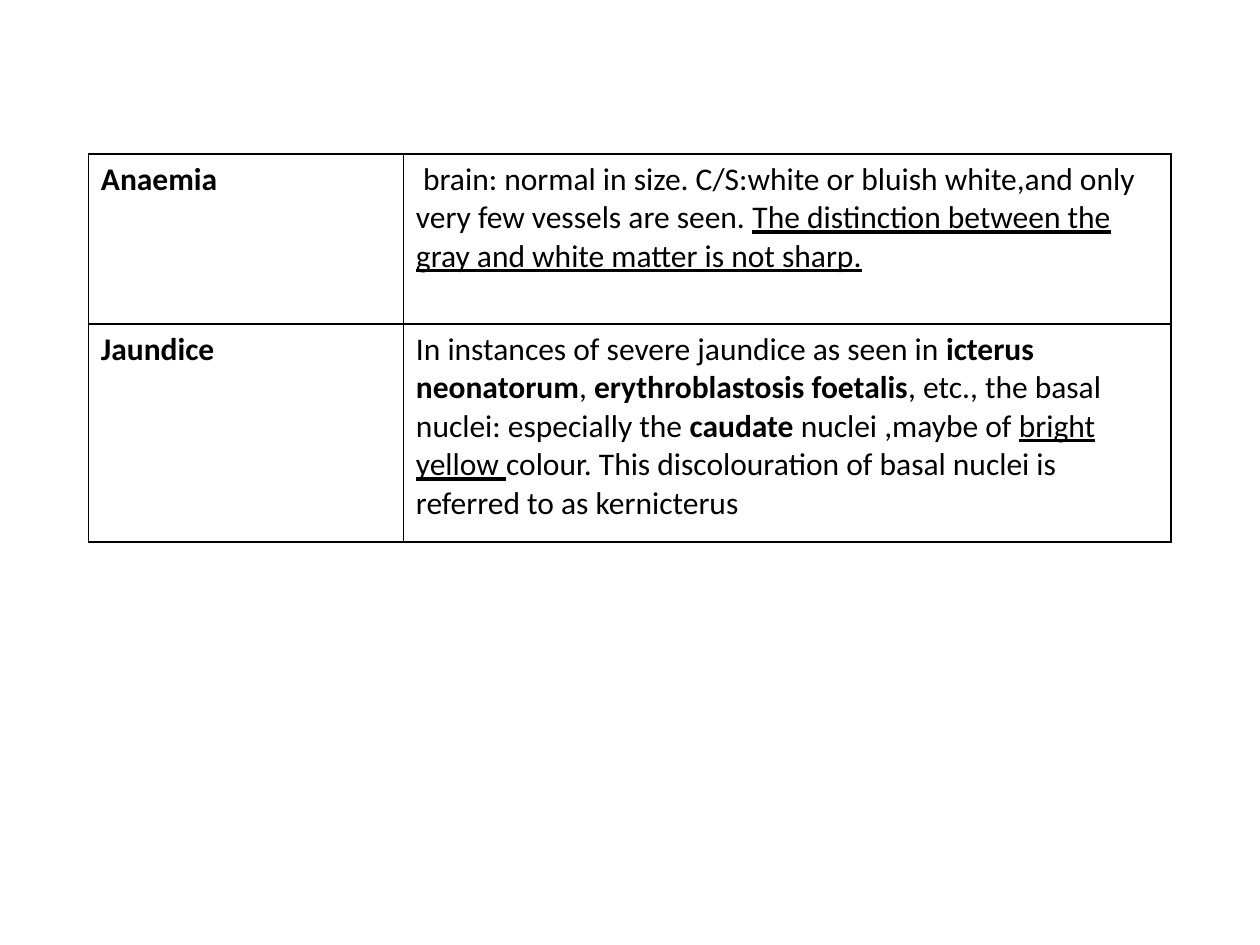
"""Build a slide with a table of brain findings in anaemia and jaundice."""
from lxml import etree
from pptx import Presentation
from pptx import util as u
from pptx.dml.color import RGBColor
from pptx.oxml.ns import qn

COLORS = {"ink": "000000", "paper": "FFFFFF"}
COLUMN_WIDTHS = [180, 438.5]
ROW_HEIGHTS = [97.2, 124.6]
FINDINGS = [
    [
        [("Anaemia", "bold")],
        [
            (" brain: normal in size. C/S:white or bluish white,and only very few vessels are seen. ", ""),
            ("The distinction between the gray and white matter is not sharp.", "underline"),
        ],
    ],
    [
        [("Jaundice", "bold")],
        [
            ("In instances of severe jaundice as seen in ", ""),
            ("icterus neonatorum", "bold"),
            (", ", ""),
            ("erythroblastosis foetalis", "bold"),
            (", etc., the basal nuclei: especially the ", ""),
            ("caudate", "bold"),
            (" nuclei ,maybe of ", ""),
            ("bright yellow ", "underline"),
            ("colour. This discolouration of basal nuclei is referred to as kernicterus", ""),
        ],
    ],
]


def add_borders(cell):
    properties = cell._tc.get_or_add_tcPr()
    for position, side in enumerate(("lnL", "lnR", "lnT", "lnB")):
        line = etree.Element(qn(f"a:{side}"), w=str(u.Pt(1)))
        fill = etree.SubElement(line, qn("a:solidFill"))
        etree.SubElement(fill, qn("a:srgbClr"), val=COLORS["ink"])
        properties.insert(position, line)


deck = Presentation()
deck.slide_width, deck.slide_height = u.Pt(720), u.Pt(540)
page = deck.slides.add_slide(deck.slide_layouts[6])

frame = page.shapes.add_table(
    len(ROW_HEIGHTS), len(COLUMN_WIDTHS), u.Pt(50.5), u.Pt(88),
    u.Pt(sum(COLUMN_WIDTHS)), u.Pt(sum(ROW_HEIGHTS)),
)
table = frame.table
table.first_row = table.horz_banding = False
for column, width in zip(table.columns, COLUMN_WIDTHS):
    column.width = u.Pt(width)
for row, height in zip(table.rows, ROW_HEIGHTS):
    row.height = u.Pt(height)

for row, contents in zip(table.rows, FINDINGS):
    for cell, pieces in zip(row.cells, contents):
        cell.fill.solid()
        cell.fill.fore_color.rgb = RGBColor.from_string(COLORS["paper"])
        add_borders(cell)
        para = cell.text_frame.paragraphs[0]
        para.font.name = "Calibri"
        para.font.size = u.Pt(18)
        para.font.color.rgb = RGBColor.from_string(COLORS["ink"])
        for wording, style in pieces:
            span = para.add_run()
            span.text = wording
            span.font.bold = style == "bold"
            span.font.underline = style == "underline"

deck.save("out.pptx")
